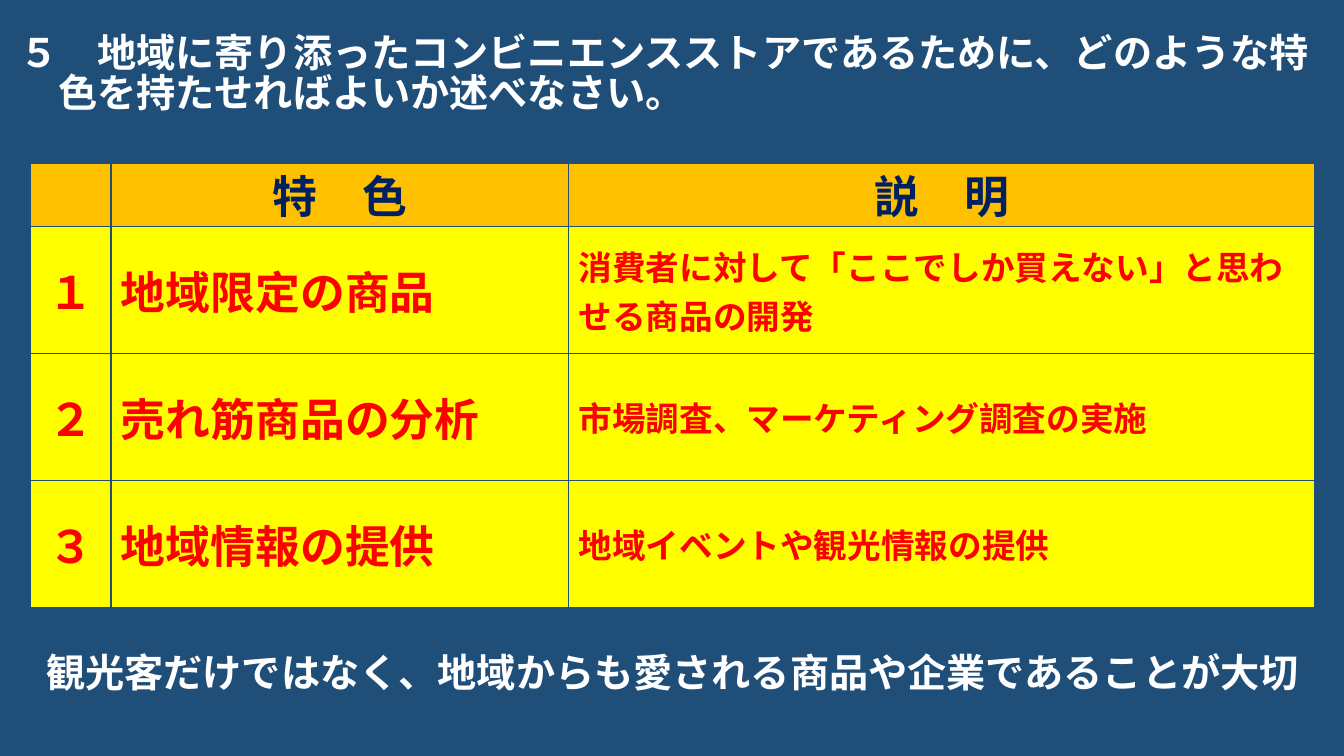
from lxml.etree import SubElement
from pptx import Presentation
from pptx.dml.color import RGBColor
from pptx.enum.text import MSO_ANCHOR, PP_ALIGN
from pptx.oxml.ns import qn
from pptx.util import Inches, Pt

FONT = "Noto Sans CJK JP"
NAVY, WHITE, RED = "1F4E79", "FFFFFF", "FF0000"


def paint(target, colour):
    target.solid()
    target.fore_color.rgb = RGBColor.from_string(colour)


def write(para, words, size, colour, align=PP_ALIGN.LEFT):
    para.alignment = align
    span = para.add_run()
    span.text = words
    span.font.size = Pt(size)
    span.font.bold = True
    span.font.name = FONT
    paint(span.font.fill, colour)
    SubElement(span.font._element, qn("a:ea"), typeface=FONT)


deck = Presentation()
deck.slide_width, deck.slide_height = Inches(13.33), Inches(7.5)
page = deck.slides.add_slide(deck.slide_layouts[6])
paint(page.background.fill, NAVY)

statements = [
    ((0.09, 0.3, 13.12, 1.04), PP_ALIGN.LEFT,
     ["５　地域に寄り添ったコンビニエンスストアであるために、どのような特",
      "　色を持たせればよいか述べなさい。"]),
    ((0.3, 6.45, 12.74, 0.57), PP_ALIGN.CENTER,
     ["観光客だけではなく、地域からも愛される商品や企業であることが大切"]),
]
for place, align, lines in statements:
    box = page.shapes.add_textbox(*map(Inches, place))
    frame = box.text_frame
    frame.word_wrap = True
    for index, line in enumerate(lines):
        para = frame.add_paragraph() if index else frame.paragraphs[0]
        para.line_spacing = 0.85
        write(para, line, 28, WHITE, align)

rows = [
    ("", "特　色", "説　明"),
    ("１", "地域限定の商品", "消費者に対して「ここでしか買えない」と思わせる商品の開発"),
    ("２", "売れ筋商品の分析", "市場調査、マーケティング調査の実施"),
    ("３", "地域情報の提供", "地域イベントや観光情報の提供"),
]
widths = [0.8, 4.54, 7.4]
heights = [0.63] + [1.26] * 3
table = page.shapes.add_table(
    len(rows), len(widths), Inches(0.3), Inches(1.62),
    Inches(sum(widths)), Inches(sum(heights))).table
for column, width in zip(table.columns, widths):
    column.width = Inches(width)
for row, height in zip(table.rows, heights):
    row.height = Inches(height)

for r, words_in_row in enumerate(rows):
    for c, words in enumerate(words_in_row):
        header = r == 0
        cell = table.cell(r, c)
        cell.vertical_anchor = MSO_ANCHOR.MIDDLE
        properties = cell._tc.get_or_add_tcPr()
        for side in ("lnL", "lnR", "lnT", "lnB"):
            border = SubElement(properties, qn(f"a:{side}"), w=str(Pt(1)))
            fill = SubElement(border, qn("a:solidFill"))
            SubElement(fill, qn("a:srgbClr"), val=NAVY)
        paint(cell.fill, "FFC000" if header else "FFFF00")
        para = cell.text_frame.paragraphs[0]
        if header:
            cell.margin_top = cell.margin_bottom = 0
            para.line_spacing = 0.97
        if words:
            write(para, words, 24 if c == 2 and not header else 32,
                  "002060" if header else RED,
                  PP_ALIGN.CENTER if header or c == 0 else PP_ALIGN.LEFT)

deck.save("out.pptx")
